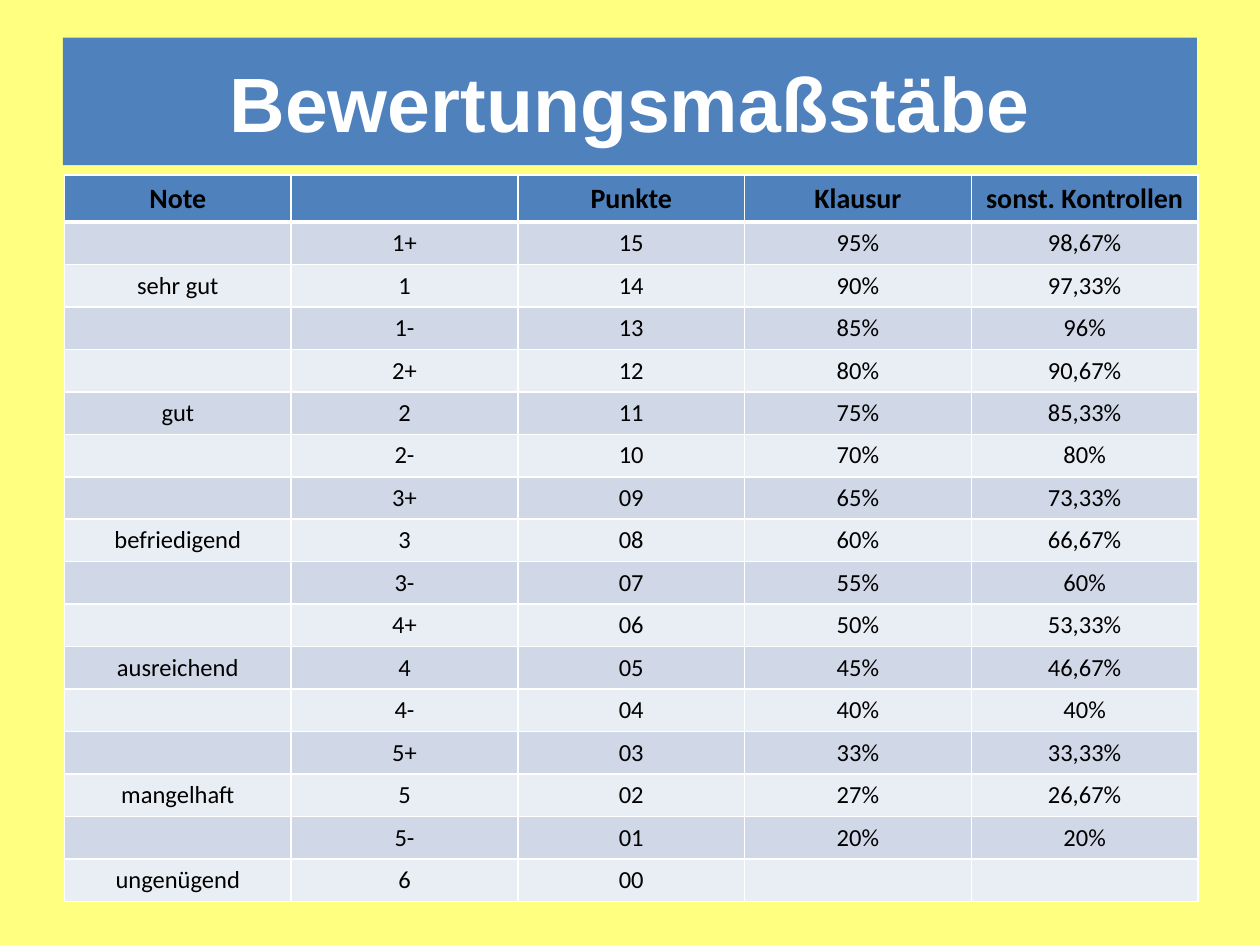
from lxml.etree import SubElement
from pptx import Presentation
from pptx.dml.color import RGBColor
from pptx.enum.shapes import MSO_SHAPE
from pptx.enum.text import MSO_ANCHOR, PP_ALIGN
from pptx.oxml.ns import qn
from pptx.util import Cm, Pt

# Content
TITLE = "Bewertungsmaßstäbe"
HEADER = ("Note", "", "Punkte", "Klausur", "sonst. Kontrollen")
GRADES = [
    ("", "1+", "15", "95%", "98,67%"),
    ("sehr gut", "1", "14", "90%", "97,33%"),
    ("", "1-", "13", "85%", "96%"),
    ("", "2+", "12", "80%", "90,67%"),
    ("gut", "2", "11", "75%", "85,33%"),
    ("", "2-", "10", "70%", "80%"),
    ("", "3+", "09", "65%", "73,33%"),
    ("befriedigend", "3", "08", "60%", "66,67%"),
    ("", "3-", "07", "55%", "60%"),
    ("", "4+", "06", "50%", "53,33%"),
    ("ausreichend", "4", "05", "45%", "46,67%"),
    ("", "4-", "04", "40%", "40%"),
    ("", "5+", "03", "33%", "33,33%"),
    ("mangelhaft", "5", "02", "27%", "26,67%"),
    ("", "5-", "01", "20%", "20%"),
    ("ungenügend", "6", "00", "", ""),
]

# Formats
YELLOW = RGBColor(0xFF, 0xFF, 0x80)
BLUE = RGBColor(0x4F, 0x81, 0xBD)
BAND_DARK = RGBColor(0xD0, 0xD8, 0xE8)
BAND_LIGHT = RGBColor(0xE9, 0xED, 0xF4)
WHITE = RGBColor(0xFF, 0xFF, 0xFF)
BLACK = RGBColor(0x00, 0x00, 0x00)
TITLE_FONT = {"name": "Arial", "size": Pt(44), "bold": True}
HEADER_FONT = {"name": "Calibri", "size": Pt(16), "bold": True}
GRADE_FONT = {"name": "Calibri", "size": Pt(14), "bold": False}
COLUMN_WIDTH, ROW_HEIGHT = Cm(4.57), Cm(0.81)
THIN, THICK = Pt(1), Pt(3)


def write(frame, text, font, color):
    """Put one centred paragraph into a text frame."""
    para = frame.paragraphs[0]
    para.alignment = PP_ALIGN.CENTER
    if not text:
        # An empty cell keeps the text size, so that its row does not grow
        end = SubElement(para._p, qn("a:endParaRPr"))
        end.set("sz", str(int(font["size"].pt * 100)))
        return
    span = para.add_run()
    span.text = text
    for name, value in font.items():
        setattr(span.font, name, value)
    span.font.color.rgb = color


def add_borders(cell, widths):
    """Draw white borders; widths maps the side letters to line widths."""
    properties = cell._tc.get_or_add_tcPr()
    for side, width in widths.items():
        line = SubElement(properties, qn(f"a:ln{side}"), w=str(int(width)))
        fill = SubElement(line, qn("a:solidFill"))
        SubElement(fill, qn("a:srgbClr"), val=str(WHITE))


deck = Presentation()
deck.slide_width, deck.slide_height = Cm(25.4), Cm(19.05)
page = deck.slides.add_slide(deck.slide_layouts[6])
page.background.fill.solid()
page.background.fill.fore_color.rgb = YELLOW

# Title bar
bar = page.shapes.add_shape(
    MSO_SHAPE.RECTANGLE, Cm(1.27), Cm(0.76), Cm(22.86), Cm(2.57))
bar.shadow.inherit = False
bar.fill.solid()
bar.fill.fore_color.rgb = BLUE
bar.line.fill.background()
bar.text_frame.word_wrap = True
bar.text_frame.vertical_anchor = MSO_ANCHOR.MIDDLE
write(bar.text_frame, TITLE, TITLE_FONT, WHITE)

# Grade table
rows = [HEADER] + GRADES
table = page.shapes.add_table(
    len(rows), len(HEADER), Cm(1.3), Cm(3.53),
    COLUMN_WIDTH * len(HEADER), ROW_HEIGHT * len(rows)).table
for column in table.columns:
    column.width = COLUMN_WIDTH
for r, texts in enumerate(rows):
    table.rows[r].height = ROW_HEIGHT
    is_header = r == 0
    band = BLUE if is_header else BAND_DARK if r % 2 else BAND_LIGHT
    widths = {"L": THIN, "R": THIN,
              "T": THICK if r == 1 else THIN,
              "B": THICK if is_header else THIN}
    for c, text in enumerate(texts):
        cell = table.cell(r, c)
        cell.vertical_anchor = MSO_ANCHOR.TOP if is_header else MSO_ANCHOR.MIDDLE
        add_borders(cell, widths)
        cell.fill.solid()
        cell.fill.fore_color.rgb = band
        write(cell.text_frame, text, HEADER_FONT if is_header else GRADE_FONT, BLACK)

deck.save("out.pptx")
